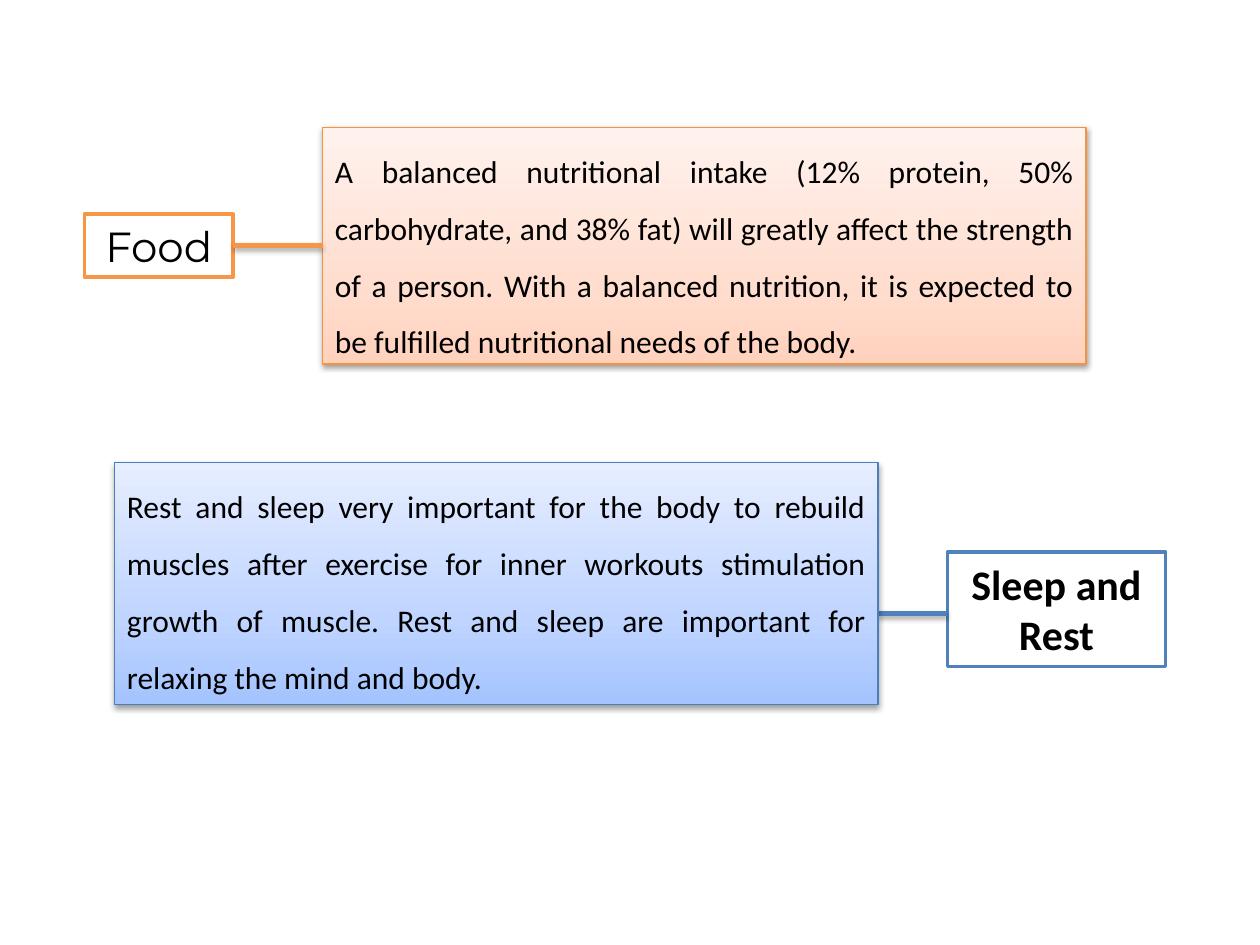
from dataclasses import dataclass

from pptx import Presentation
from pptx.dml.color import RGBColor as RGB
from pptx.enum.shapes import MSO_CONNECTOR, MSO_SHAPE
from pptx.enum.text import MSO_ANCHOR, MSO_AUTO_SIZE, PP_ALIGN
from pptx.oxml import parse_xml
from pptx.oxml.ns import nsdecls
from pptx.shapes.autoshape import Shape
from pptx.shapes.connector import Connector
from pptx.util import Inches, Pt


@dataclass(frozen=True)
class Accent:
    strong: str
    edge: str
    stops: tuple[tuple[int, str], ...]


@dataclass(frozen=True)
class Theme:
    orange: Accent = Accent("F79646", "F69240",
                            ((0, "FFD2BD"), (35, "FFDED0"), (100, "FFF2ED")))
    blue: Accent = Accent("4F81BD", "4B7EBC",
                          ((0, "A4C4FF"), (35, "BFD4FF"), (100, "E6EEFF")))
    ink: str = "000000"
    paper: str = "FFFFFF"
    body_font: str = "Calibri"
    display_font: str = "Montserrat"
    label_size: int = 24
    body_size: int = 18


@dataclass(frozen=True)
class Area:
    """Place and size in percent of the slide."""
    x: float
    y: float
    w: float
    h: float


T = Theme()
prs = Presentation()
prs.slide_width, prs.slide_height = Inches(10), Inches(7.5)
s = prs.slides.add_slide(prs.slide_layouts[6])


def across(share: float) -> int:
    return round(prs.slide_width * share / 100)


def down(share: float) -> int:
    return round(prs.slide_height * share / 100)


def add_shadow(item: Shape | Connector, dist: float, alpha: int) -> None:
    item._element.spPr.append(parse_xml(
        f'<a:effectLst {nsdecls("a")}><a:outerShdw blurRad="{Pt(3.1)}" '
        f'dist="{Pt(dist)}" dir="5400000" rotWithShape="0"><a:srgbClr val="{T.ink}">'
        f'<a:alpha val="{alpha * 1000}"/></a:srgbClr></a:outerShdw></a:effectLst>'))


def add_box(area: Area, text: str, edge: str, width: float, size: int,
            align: PP_ALIGN, font: str = T.body_font) -> Shape:
    sp = s.shapes.add_shape(MSO_SHAPE.RECTANGLE, across(area.x), down(area.y),
                            across(area.w), down(area.h))
    sp.line.color.rgb = RGB.from_string(edge)
    sp.line.width = Pt(width)
    tf = sp.text_frame
    tf.word_wrap = True
    tf.auto_size = MSO_AUTO_SIZE.SHAPE_TO_FIT_TEXT
    tf.vertical_anchor = MSO_ANCHOR.TOP
    p = tf.paragraphs[0]
    p.text = text
    p.alignment = align
    p.font.name = font
    p.font.size = Pt(size)
    p.font.color.rgb = RGB.from_string(T.ink)
    return sp


def add_label(area: Area, text: str, accent: Accent, font: str, bold: bool = False) -> Shape:
    sp = add_box(area, text, accent.strong, 2, T.label_size, PP_ALIGN.CENTER, font)
    sp.shadow.inherit = False
    sp.fill.solid()
    sp.fill.fore_color.rgb = RGB.from_string(T.paper)
    sp.text_frame.paragraphs[0].font.bold = bold
    return sp


def add_panel(area: Area, text: str, accent: Accent) -> Shape:
    sp = add_box(area, text, accent.edge, 0.75, T.body_size, PP_ALIGN.JUSTIFY)
    sp.text_frame.paragraphs[0].line_spacing = 1.5
    stops = "".join(f'<a:gs pos="{pos * 1000}"><a:srgbClr val="{color}"/></a:gs>'
                    for pos, color in accent.stops)
    sp._element.spPr.ln.addprevious(parse_xml(
        f'<a:gradFill {nsdecls("a")} rotWithShape="1"><a:gsLst>{stops}</a:gsLst>'
        '<a:lin ang="16200000" scaled="0"/></a:gradFill>'))
    add_shadow(sp, 1.6, 38)
    return sp


def add_link(x1: float, x2: float, y: float, accent: Accent) -> Connector:
    link = s.shapes.add_connector(MSO_CONNECTOR.STRAIGHT, across(x1), down(y),
                                  across(x2), down(y))
    link.line.color.rgb = RGB.from_string(accent.strong)
    link.line.width = Pt(3)
    add_shadow(link, 1.8, 35)
    return link


food = add_label(Area(6.7, 22.67, 11.8, 6.67), "Food", T.orange, T.display_font)
food_panel = add_panel(
    Area(25.6, 13.47, 60.6, 25.07),
    "A balanced nutritional intake (12% protein, 50% carbohydrate, and 38% fat) will "
    "greatly affect the strength of a person. With a balanced nutrition, it is expected "
    "to be fulfilled nutritional needs of the body.", T.orange)
food_link = add_link(18.5, 25.6, 26, T.orange)
food_link.begin_connect(food, 3)
food_link.end_connect(food_panel, 1)

add_label(Area(75.2, 58.4, 17.3, 12.13), "Sleep and Rest", T.blue, T.body_font, bold=True)
add_link(69.7, 75.2, 64.93, T.blue)
add_panel(
    Area(9.1, 48.93, 60.6, 25.6),
    "Rest and sleep very important for the body to rebuild muscles after exercise for "
    "inner workouts stimulation growth of muscle. Rest and sleep are important for "
    "relaxing the mind and body.", T.blue)

prs.save("out.pptx")
